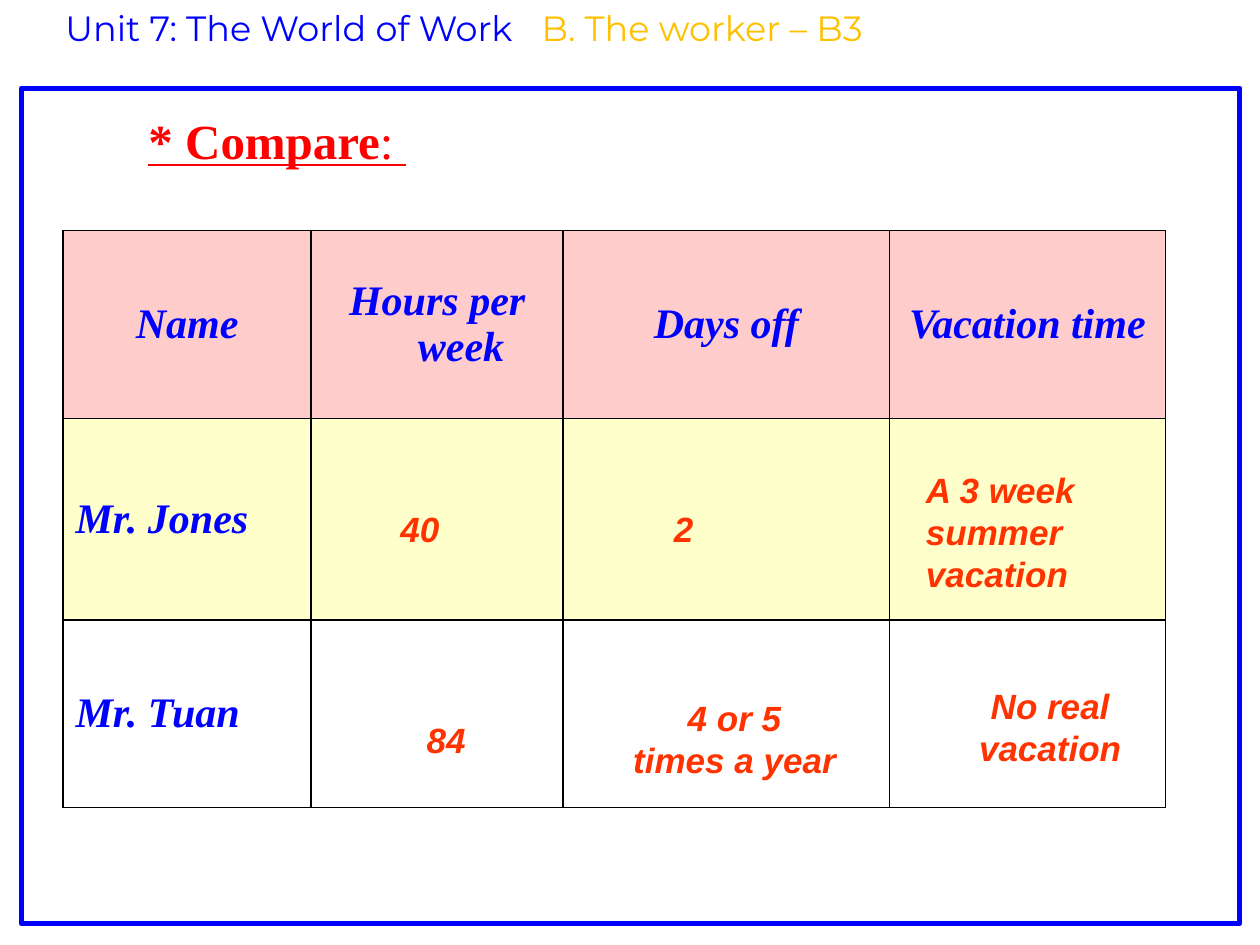
import pptx
import pptx.util
import pptx.dml.color
import pptx.enum.shapes
import pptx.enum.text
import pptx.oxml
import pptx.oxml.ns
from dataclasses import dataclass

Inches = pptx.util.Inches
Pt = pptx.util.Pt
ALIGN = pptx.enum.text.PP_ALIGN
MIDDLE = pptx.enum.text.MSO_ANCHOR.MIDDLE


@dataclass(frozen=True)
class Theme:
    blue: str = "0000FF"
    gold: str = "FFC000"
    red: str = "FF0000"
    orange: str = "FF3300"
    black: str = "000000"
    row_fills: tuple = ("FFCCCC", "FFFFCC", "FFFFFF")
    body: int = 20
    label: int = 24
    heading: int = 28


T = Theme()
UNIT = dict(name="Montserrat", size=T.body, color=T.blue)
LESSON = {**UNIT, "color": T.gold}
HEADING = dict(name="Times New Roman", size=T.heading, color=T.red,
               bold=True, underline=True)
HEADING_COLON = {**HEADING, "bold": False}
LABEL = dict(name="Times New Roman", size=T.label, color=T.blue,
             bold=True, italic=True)
ANSWER = dict(name="Arial", size=T.body, color=T.orange,
              bold=True, italic=True)


def rgb(value):
    return pptx.dml.color.RGBColor.from_string(value)


def add_run(p, text, style):
    r = p.add_run()
    r.text = text
    for key, value in style.items():
        if key == "color":
            r.font.color.rgb = rgb(value)
        else:
            setattr(r.font, key, Pt(value) if key == "size" else value)


def add_text(s, box, paragraphs, align=ALIGN.LEFT):
    """Add a text box; each paragraph is a list of (text, style) runs."""
    tf = s.shapes.add_textbox(*map(Inches, box)).text_frame
    tf.word_wrap = True
    tf.auto_size = pptx.enum.text.MSO_AUTO_SIZE.SHAPE_TO_FIT_TEXT
    for i, runs in enumerate(paragraphs):
        p = tf.add_paragraph() if i else tf.paragraphs[0]
        p.alignment = align
        for text, style in runs:
            add_run(p, text, style)
    return tf


def add_header(s, box):
    runs = [("Unit 7: The World of Work\t", UNIT), ("B. The worker – B3", LESSON)]
    p = add_text(s, box, [runs]).paragraphs[0]
    pPr = p._p.get_or_add_pPr()
    pPr.set("indent", str(Inches(0.22)))
    pPr.append(pptx.oxml.parse_xml(
        f'<a:tabLst {pptx.oxml.ns.nsdecls("a")}>'
        f'<a:tab pos="{Inches(5.01)}" algn="l"/></a:tabLst>'))


def add_frame(s, box):
    sp = s.shapes.add_shape(pptx.enum.shapes.MSO_SHAPE.RECTANGLE,
                            *map(Inches, box))
    sp.shadow.inherit = False
    sp.fill.background()
    sp.line.color.rgb = rgb(T.blue)
    sp.line.width = Pt(3)


def format_cell(cell, fill):
    tcPr = cell._tc.get_or_add_tcPr()
    for side in ("lnL", "lnR", "lnT", "lnB"):
        tcPr.append(pptx.oxml.parse_xml(
            f'<a:{side} {pptx.oxml.ns.nsdecls("a")} w="{Pt(1)}"><a:solidFill>'
            f'<a:srgbClr val="{T.black}"/></a:solidFill></a:{side}>'))
    cell.fill.solid()
    cell.fill.fore_color.rgb = rgb(fill)
    cell.vertical_anchor = MIDDLE


def add_table(s, box, widths, heights, labels):
    table = s.shapes.add_table(len(heights), len(widths),
                               *map(Inches, box)).table
    for column, width in zip(table.columns, widths):
        column.width = Inches(width)
    for i, (row, height) in enumerate(zip(table.rows, heights)):
        row.height = Inches(height)
        for cell in row.cells:
            format_cell(cell, T.row_fills[i])
        for cell, text in zip(row.cells, labels[i]):
            p = cell.text_frame.paragraphs[0]
            p.alignment = ALIGN.LEFT if i else ALIGN.CENTER
            pPr = p._p.get_or_add_pPr()
            pPr.set("marL", str(Inches(0.38)))
            pPr.set("indent", str(-Inches(0.38)))
            add_run(p, text, LABEL)


def add_answers(s, left, top, answers):
    """Place each answer by its offset from the corner of the table."""
    for (dx, dy, width, height), lines, align in answers:
        add_text(s, (left + dx, top + dy, width, height),
                 [[(line, ANSWER)] for line in lines], align)


def add_comparison(s, left, top):
    add_table(s, (left, top, 8.75, 4.58), (1.97, 2, 2.59, 2.19),
              (1.49, 1.6, 1.49),
              [("Name", "Hours per week", "Days off", "Vacation time"),
               ("Mr. Jones",), ("Mr. Tuan",)])
    add_frame(s, (0.17, 0.7, 9.67, 6.63))
    add_text(s, (1.08, 0.83, 2.58, 0.57),
             [[("* Compare", HEADING), (": ", HEADING_COLON)]])
    add_answers(s, left, top, [
        ((2.58, 2.15, 1.17, 0.43), ["40"], ALIGN.LEFT),
        ((4.75, 2.15, 0.75, 0.43), ["2"], ALIGN.LEFT),
        ((6.75, 1.84, 1.92, 1.11), ["A 3 week summer vacation"], ALIGN.LEFT),
        ((2.33, 3.82, 1.42, 0.43), ["84"], ALIGN.CENTER),
        ((4.08, 3.65, 2.5, 0.77), ["4 or 5", "times a year"], ALIGN.CENTER),
        ((6.92, 3.55, 1.83, 0.77), ["No real vacation"], ALIGN.CENTER),
    ])


def main():
    prs = pptx.Presentation()
    prs.slide_width, prs.slide_height = Inches(10), Inches(7.5)
    s = prs.slides.add_slide(prs.slide_layouts[6])
    add_header(s, (0.2, 0, 9.75, 0.44))
    add_comparison(s, 0.5, 1.83)
    prs.save("out.pptx")


if __name__ == "__main__":
    main()
